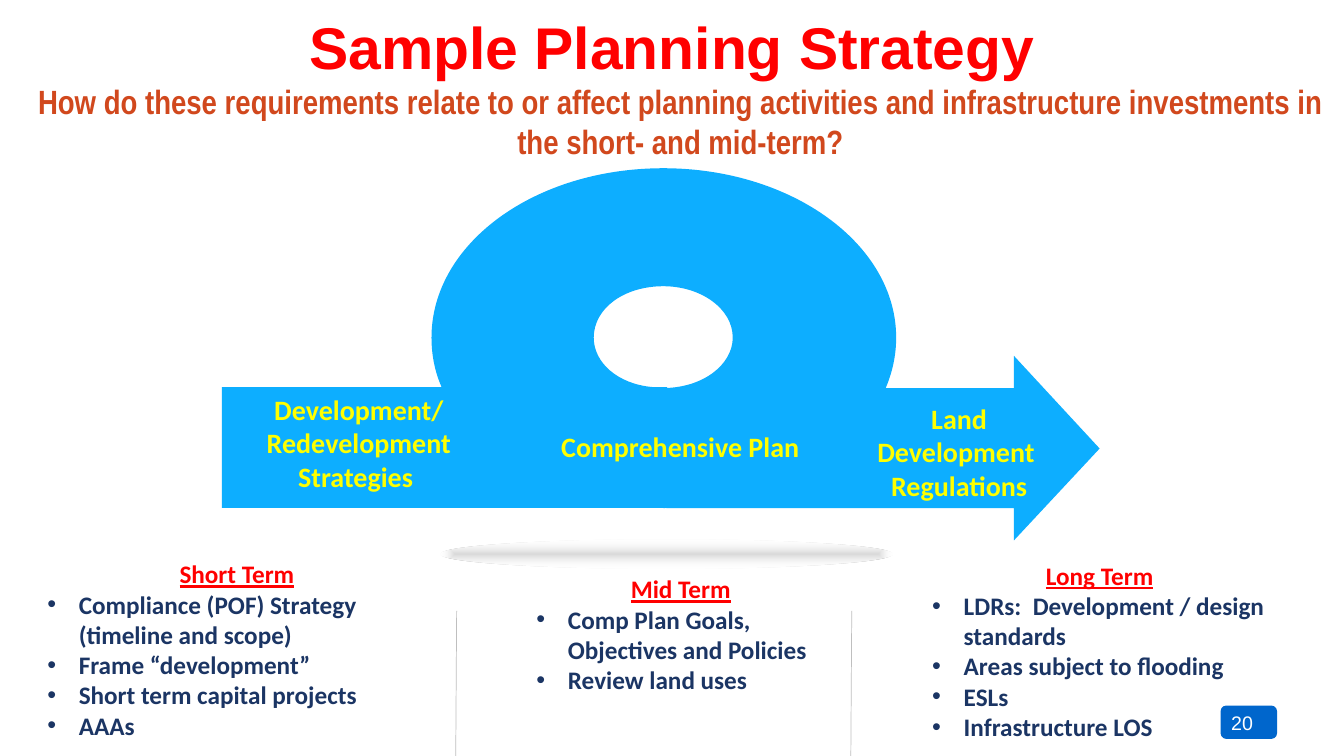
from lxml import etree
from pptx import Presentation
from pptx.dml.color import RGBColor
from pptx.enum.shapes import MSO_CONNECTOR, MSO_SHAPE
from pptx.enum.text import MSO_ANCHOR, PP_ALIGN
from pptx.oxml import parse_xml
from pptx.oxml.ns import nsdecls, qn
from pptx.util import Pt

LEFT, CENTER, RIGHT = PP_ALIGN.LEFT, PP_ALIGN.CENTER, PP_ALIGN.RIGHT
TOP, MIDDLE, BOTTOM = MSO_ANCHOR.TOP, MSO_ANCHOR.MIDDLE, MSO_ANCHOR.BOTTOM
RECTANGLE, ELLIPSE = MSO_SHAPE.RECTANGLE, MSO_SHAPE.OVAL
BADGE = MSO_SHAPE.ROUNDED_RECTANGLE
STRAIGHT = MSO_CONNECTOR.STRAIGHT

RED = RGBColor(0xFF, 0x00, 0x00)
RUST = RGBColor(0xD1, 0x48, 0x1D)
SKY = RGBColor(0x0D, 0xAE, 0xFF)
YELLOW = RGBColor(0xFF, 0xFF, 0x00)
NAVY = RGBColor(0x1B, 0x35, 0x64)
BLUE = RGBColor(0x00, 0x66, 0xCC)
GREY = RGBColor(0xBF, 0xBF, 0xBF)
WHITE = RGBColor(0xFF, 0xFF, 0xFF)

ARROW_START = (476, 363)
ARROW_HEAD = [[(724.3, 363)], [(724.3, 386)], [(785.5, 320.4)],
              [(724.3, 254.2)], [(724.3, 277.2)], [(476, 277.2)]]
LOOP_START = (473.8, 277.2)
LOOP = [
    [(473.8, 362.9)],
    [(565.2, 362.9), (640.1, 308.2), (640.1, 241.2)],
    [(640.1, 174.2), (565.2, 120.2), (473.8, 120.2)],
    [(381.6, 120.2), (308.2, 174.2), (308.2, 241.2)],
    [(308.2, 252.7), (310.3, 265), (315.4, 276.5)],
    [(465.8, 276.5)],
    [(441.4, 274.3), (424.1, 259.2), (424.1, 241.2)],
    [(424.1, 220.3), (445.7, 204.5), (473.8, 204.5)],
    [(500.4, 204.5), (523.4, 220.3), (523.4, 241.2)],
    [(523.4, 260.6), (501.8, 277.2), (473.8, 277.2)],
]
STAGES = [
    ((169.2, 276.5, 174.2, 80), TOP, ["Development/", "Redevelopment Strategies "]),
    ((393.8, 303.6, 184.3, 55.4), TOP, ["Comprehensive Plan"]),
    ((607.7, 257.8, 154.8, 104.4), BOTTOM, ["Land Development ", "Regulations"]),
]
TERMS = [
    ((26.7, 395.5, 285.1, 156.2), "Short Term",
     ["Compliance (POF) Strategy (timeline and scope)", "Frame “development”",
      "Short term capital projects", "AAAs"]),
    ((376.1, 406.3, 220.3, 111.6), "Mid Term",
     ["Comp Plan Goals, Objectives and Policies", "Review land uses"]),
    ((658.8, 396.5, 253.4, 138.2), "Long Term",
     ["LDRs:  Development / design standards", "Areas subject to flooding",
      "ESLs", "Infrastructure LOS"]),
]
SHADE = f"""<a:gradFill {nsdecls('a')} rotWithShape="1"><a:gsLst>
<a:gs pos="0"><a:srgbClr val="D9D9D9"/></a:gs>
<a:gs pos="100000"><a:srgbClr val="FFFFFF"><a:alpha val="0"/></a:srgbClr></a:gs>
</a:gsLst><a:path path="shape">
<a:fillToRect l="50000" t="50000" r="50000" b="50000"/></a:path></a:gradFill>"""


def add_text_box(page, area, anchor=TOP):
    """Add an empty wrapping text box and return its frame."""
    frame = page.shapes.add_textbox(*map(Pt, area)).text_frame
    frame.word_wrap = True
    frame.vertical_anchor = anchor
    return frame


def add_para(frame, text, size, color, name="Calibri", align=CENTER,
             bold=True, underline=False, bullet=False):
    """Write one paragraph, reusing the empty first one of the frame."""
    para = frame.paragraphs[0]
    if para.runs:
        para = frame.add_paragraph()
    para.alignment = align
    if bullet:
        add_bullet(para)
    span = para.add_run()
    span.text = text
    font = span.font
    font.name, font.size, font.bold = name, Pt(size), bold
    font.underline = underline
    font.color.rgb = color


def add_bullet(para):
    """Give a paragraph a round bullet with a hanging indent."""
    properties = para._p.get_or_add_pPr()
    properties.set("marL", str(Pt(22.5)))
    properties.set("indent", str(-Pt(22.5)))
    etree.SubElement(properties, qn("a:buFont")).set("typeface", "Arial")
    etree.SubElement(properties, qn("a:buChar")).set("char", "•")


def paint(shape, color):
    """Fill a shape with one colour, without outline or shadow."""
    shape.shadow.inherit = False
    shape.fill.solid()
    shape.fill.fore_color.rgb = color
    shape.line.fill.background()


def add_block(page, kind, area, color):
    """Add a flat preset shape."""
    shape = page.shapes.add_shape(kind, *map(Pt, area))
    paint(shape, color)
    return shape


def add_outline(page, start, segments, color):
    """Add a flat closed shape; segments of three points become curves."""
    builder = page.shapes.build_freeform(*map(Pt, start))
    builder.add_line_segments(
        [(Pt(x), Pt(y)) for segment in segments for x, y in segment], close=True)
    shape = builder.convert_to_shape()
    paint(shape, color)
    steps = iter(list(shape._element.iter(qn("a:lnTo"))))
    for segment in segments:
        first, *others = [next(steps) for _ in segment]
        if others:
            first.tag = qn("a:cubicBezTo")
        for step in others:
            first.append(step[0])
            step.getparent().remove(step)


def add_shade(page, area):
    """Add an ellipse that fades outwards from grey."""
    shade = add_block(page, ELLIPSE, area, GREY)
    solid = shade._element.spPr.find(qn("a:solidFill"))
    solid.getparent().replace(solid, parse_xml(SHADE))


def add_divider(page, x):
    """Add a thin, slightly slanted line between two columns."""
    line = page.shapes.add_connector(STRAIGHT, Pt(x), Pt(436.3), Pt(x - 0.7), Pt(547.2))
    line.line.color.rgb = GREY
    line.line.width = Pt(0.5)
    etree.SubElement(line._element.spPr, qn("a:effectLst"))


def add_term(page, area, heading, items):
    """Add a column with an underlined heading and bullets."""
    frame = add_text_box(page, area)
    add_para(frame, heading, 18, RED, underline=True)
    for item in items:
        add_para(frame, item, 18, NAVY, align=LEFT, bullet=True)


def main():
    """Build the planning strategy slide."""
    deck = Presentation()
    deck.slide_width, deck.slide_height = Pt(960), Pt(540)
    page = deck.slides.add_slide(deck.slide_layouts[6])

    add_block(page, BADGE, (871.9, 504, 40.3, 23.8), BLUE)
    title = add_text_box(page, (18, -12.2, 936, 90), MIDDLE)
    add_para(title, "Sample Planning Strategy ", 42, RED, "Arial")
    question = add_text_box(page, (18, 54, 936, 46.8))
    add_para(question, "How do these requirements relate to or affect planning "
             "activities and infrastructure investments in the short- and "
             "mid-term?", 24, RUST, "Arial Narrow")
    number = add_text_box(page, (678.2, 504, 223.9, 28.8))
    add_para(number, "20", 14, WHITE, "Arial", RIGHT, bold=False)

    add_outline(page, ARROW_START, ARROW_HEAD, SKY)
    add_outline(page, LOOP_START, LOOP, SKY)
    add_block(page, RECTANGLE, (158.4, 276.5, 318.2, 86.4), SKY)
    for area, anchor, lines in STAGES:
        frame = add_text_box(page, area, anchor)
        for line in lines:
            add_para(frame, line, 20, YELLOW)

    add_shade(page, (314.6, 385.2, 322.6, 20.9))
    for area, heading, items in TERMS:
        add_term(page, area, heading, items)
    for x in (326.2, 608.4):
        add_divider(page, x)
    deck.save("out.pptx")


if __name__ == "__main__":
    main()
